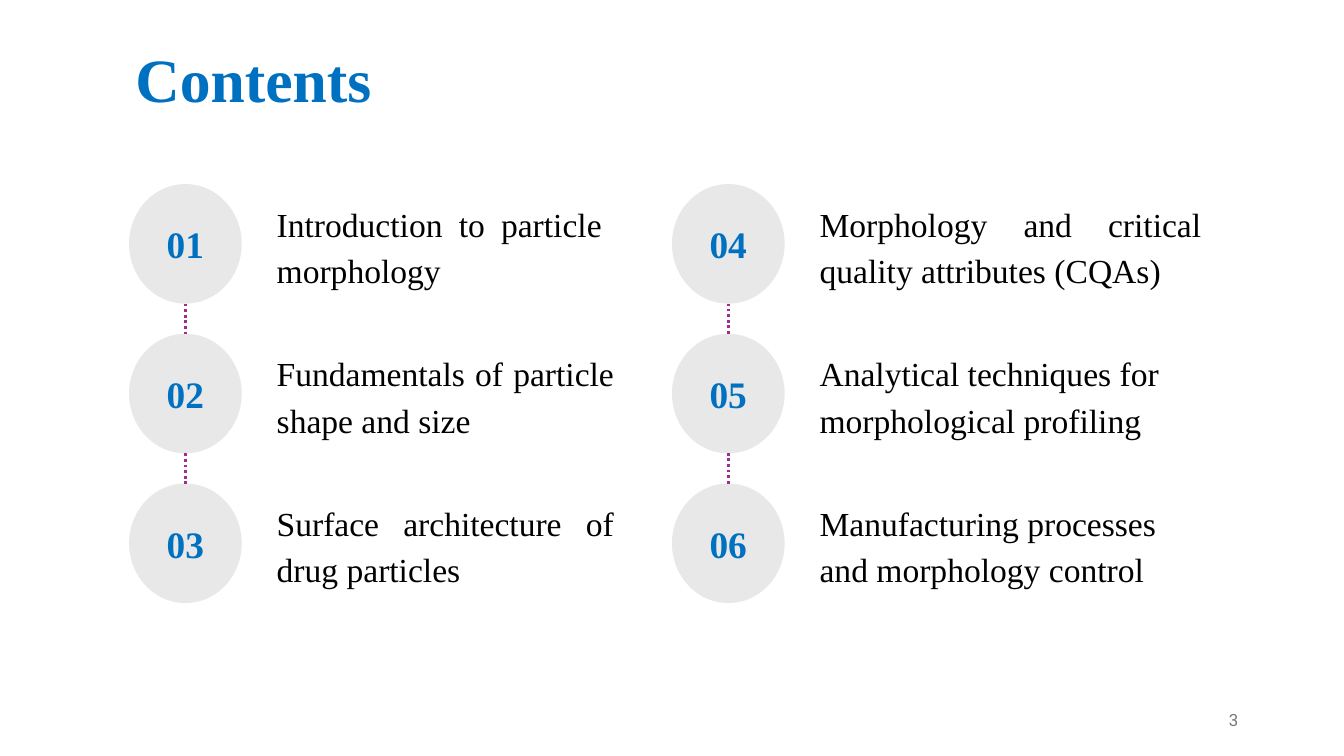
from pptx import Presentation
from pptx.dml.color import RGBColor
from pptx.enum.dml import MSO_LINE
from pptx.enum.shapes import MSO_CONNECTOR, MSO_SHAPE
from pptx.enum.text import MSO_ANCHOR, PP_ALIGN
from pptx.oxml.ns import qn
from pptx.util import Cm, Pt
from lxml import etree

OVAL = MSO_SHAPE.OVAL
STRAIGHT = MSO_CONNECTOR.STRAIGHT
DOTTED = MSO_LINE.ROUND_DOT
TOP, MIDDLE = MSO_ANCHOR.TOP, MSO_ANCHOR.MIDDLE
LEFT, CENTER, RIGHT, JUSTIFY = PP_ALIGN.LEFT, PP_ALIGN.CENTER, PP_ALIGN.RIGHT, PP_ALIGN.JUSTIFY

COLORS = {
    "accent": "0070C0",
    "circle": "E8E8E8",
    "text": "000000",
    "link": "A02B93",
    "page": "797979",
}
SERIF = "Times New Roman"
COLUMN_LEFTS = (2.44, 12.7)
FIRST_TOP, ROW_PITCH = 3.48, 2.83
CIRCLE_WIDTH, CIRCLE_HEIGHT = 2.13, 2.26
TOPIC_OFFSET = 2.54
INSET = 0.25
TOPICS = (
    (
        ("Introduction to particle morphology", 6.65, JUSTIFY),
        ("Fundamentals of particle shape and size", 6.88, JUSTIFY),
        ("Surface architecture of drug particles", 6.88, JUSTIFY),
    ),
    (
        ("Morphology and critical quality attributes (CQAs)", 7.72, JUSTIFY),
        ("Analytical techniques for morphological profiling", 7.72, LEFT),
        ("Manufacturing processes and morphology control", 7.11, LEFT),
    ),
)


def color(name):
    """Return the named colour."""
    return RGBColor.from_string(COLORS[name])


def write(box, text, size, ink, align=LEFT, font=SERIF, bold=False, spacing=1.0,
          anchor=MIDDLE, insets=(INSET, INSET)):
    """Fill a shape with one styled paragraph; insets are horizontal and vertical."""
    frame = box.text_frame
    frame.word_wrap = True
    frame.vertical_anchor = anchor
    frame.margin_left = frame.margin_right = Cm(insets[0])
    frame.margin_top = frame.margin_bottom = Cm(insets[1])
    para = frame.paragraphs[0]
    para.text = text
    para.alignment = align
    para.line_spacing = spacing
    para.font.name = font
    para.font.size = Pt(size)
    para.font.bold = bold
    para.font.color.rgb = color(ink)


def add_text(page, left, top, width, height, text, size, ink, **style):
    """Add a text box, measured in centimetres."""
    box = page.shapes.add_textbox(Cm(left), Cm(top), Cm(width), Cm(height))
    write(box, text, size, ink, **style)


def add_circle(page, left, top, number):
    """Add a numbered circle."""
    circle = page.shapes.add_shape(OVAL, Cm(left), Cm(top), Cm(CIRCLE_WIDTH), Cm(CIRCLE_HEIGHT))
    circle.shadow.inherit = False
    circle.fill.solid()
    circle.fill.fore_color.rgb = color("circle")
    circle.line.fill.background()
    write(circle, f"{number:02d}", 20, "accent", align=CENTER, bold=True)


def add_link(page, x, start, end):
    """Add a vertical dotted line between two circles."""
    link = page.shapes.add_connector(STRAIGHT, Cm(x), Cm(start), Cm(x), Cm(end))
    link.line.color.rgb = color("link")
    link.line.width = Pt(1.5)
    link.line.dash_style = DOTTED
    etree.SubElement(link._element.spPr, qn("a:effectLst"))


def add_column(page, left, topics, first_number, upward):
    """Add a column of numbered topics joined by dotted lines."""
    for row, (topic, width, align) in enumerate(topics):
        top = FIRST_TOP + row * ROW_PITCH
        add_text(page, left + TOPIC_OFFSET, top, width, CIRCLE_HEIGHT, topic, 18, "text",
                 align=align, spacing=1.15)
        add_circle(page, left, top, first_number + row)
        if row:
            ends = (top - ROW_PITCH + CIRCLE_HEIGHT, top)
            add_link(page, left + CIRCLE_WIDTH / 2, *(reversed(ends) if upward else ends))


def main():
    """Build the contents slide."""
    deck = Presentation()
    deck.slide_width, deck.slide_height = Cm(25.4), Cm(14.29)
    page = deck.slides.add_slide(deck.slide_layouts[6])
    add_text(page, 2.31, 0.76, 21.89, 2.77, "Contents", 33, "accent",
             bold=True, spacing=0.9, anchor=TOP, insets=(INSET, 0.17))
    add_text(page, 17.93, 13.23, 5.72, 0.76, "3", 9, "page",
             align=RIGHT, font="Roboto", insets=(INSET, 0.13))
    for column, (left, topics) in enumerate(zip(COLUMN_LEFTS, TOPICS)):
        add_column(page, left, topics, 1 + column * len(topics), upward=column == 1)
    deck.save("out.pptx")


if __name__ == "__main__":
    main()
